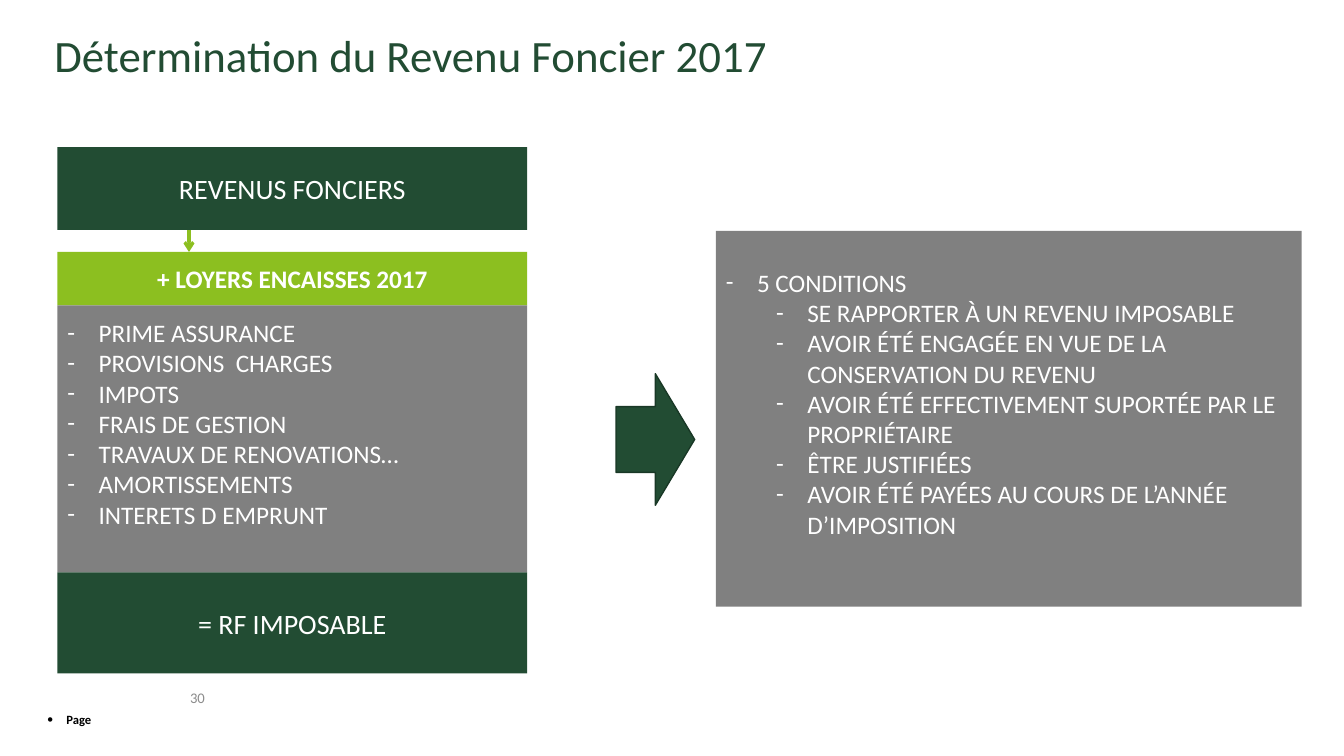
from dataclasses import dataclass

from lxml import etree
from pptx import Presentation
from pptx.dml.color import RGBColor
from pptx.enum.shapes import MSO_CONNECTOR as Line, MSO_SHAPE as Shape
from pptx.enum.text import MSO_ANCHOR as Anchor, PP_ALIGN as Align
from pptx.oxml.ns import qn
from pptx.util import Inches, Pt


@dataclass(frozen=True)
class Theme:
    font: str = "Calibri"
    green: str = "224C33"
    edge: str = "193826"
    lime: str = "8CBF20"
    grey: str = "808080"
    pale: str = "8C8C8C"
    white: str = "FFFFFF"
    black: str = "000000"
    title: float = 32
    band: float = 20
    body: float = 18
    number: float = 10.5
    footer: float = 9


THEME = Theme()
WIDTH, HEIGHT = 13.33, 7.5
LINE_HEIGHT = 0.31
HANG = 0.31

CHARGES = ["PRIME ASSURANCE", "PROVISIONS  CHARGES", "IMPOTS", "FRAIS DE GESTION",
           "TRAVAUX DE RENOVATIONS…", "AMORTISSEMENTS", "INTERETS D EMPRUNT"]
CONDITIONS = ["SE RAPPORTER À UN REVENU IMPOSABLE",
              "AVOIR ÉTÉ ENGAGÉE EN VUE DE LA CONSERVATION DU REVENU",
              "AVOIR ÉTÉ EFFECTIVEMENT SUPORTÉE PAR LE PROPRIÉTAIRE",
              "ÊTRE JUSTIFIÉES",
              "AVOIR ÉTÉ PAYÉES AU COURS DE L’ANNÉE D’IMPOSITION"]


def rgb(color):
    return RGBColor.from_string(color)


def style(p, size, color, bold=False, align=Align.LEFT):
    p.alignment = align
    for r in p.runs:
        r.font.name, r.font.size, r.font.bold = THEME.font, Pt(size), bold
        r.font.color.rgb = rgb(color)


def bullet(p, char, left, hang):
    pPr = p._p.get_or_add_pPr()
    pPr.set("marL", str(Inches(left)))
    pPr.set("indent", str(-Inches(hang)))
    etree.SubElement(pPr, qn("a:buFont")).set("typeface", "Calibri")
    etree.SubElement(pPr, qn("a:buChar")).set("char", char)


def add_label(s, box, text, size, color, **look):
    tf = s.shapes.add_textbox(*map(Inches, box)).text_frame
    tf.word_wrap = True
    tf.vertical_anchor = Anchor.MIDDLE
    tf.text = text
    style(tf.paragraphs[0], size, color, **look)
    return tf


def add_block(s, box, fill, kind=Shape.RECTANGLE):
    sp = s.shapes.add_shape(kind, *map(Inches, box))
    sp.shadow.inherit = False
    sp.fill.solid()
    sp.fill.fore_color.rgb = rgb(fill)
    sp.line.fill.background()
    return sp


def add_band(s, box, text, fill, size, bold=False):
    tf = add_block(s, box, fill).text_frame
    tf.vertical_anchor = Anchor.MIDDLE
    tf.text = text
    style(tf.paragraphs[0], size, THEME.white, bold, Align.CENTER)


def add_list(s, box, items):
    """Grey panel of (level, text) items, centred above one free line."""
    tf = add_block(s, box, THEME.grey).text_frame
    tf.word_wrap = True
    tf.vertical_anchor = Anchor.MIDDLE
    tf.margin_bottom = Inches(0.05 + LINE_HEIGHT)
    tf.text = "\n".join(text for _, text in items)
    for p, (level, _) in zip(tf.paragraphs, items):
        p.level = level
        bullet(p, "-", HANG + level * 0.5, HANG)
        style(p, THEME.body, THEME.white)


def add_down_arrow(s, start, end):
    cx = s.shapes.add_connector(Line.STRAIGHT, *map(Inches, start + end))
    cx.line.color.rgb = rgb(THEME.lime)
    cx.line.width = Pt(2.25)
    etree.SubElement(cx.line._get_or_add_ln(), qn("a:tailEnd")).set("type", "arrow")
    etree.SubElement(cx._element.spPr, qn("a:effectLst"))


def income_column(s, x, y, w):
    """Stacks the income calculation downwards from y."""
    head, gap, rents, charges, result = 0.82, 0.22, 0.53, 2.65, 1.0
    add_band(s, (x, y, w, head), "REVENUS FONCIERS", THEME.green, THEME.band)
    y += head
    arrow_x = x + 0.28 * w
    add_down_arrow(s, (arrow_x, y), (arrow_x, y + gap))
    y += gap
    add_band(s, (x, y, w, rents), "+ LOYERS ENCAISSES 2017", THEME.lime, THEME.body, True)
    y += rents
    add_list(s, (x, y, w, charges), [(0, text) for text in CHARGES])
    y += charges
    add_band(s, (x, y, w, result), "= RF IMPOSABLE", THEME.green, THEME.band)


def conditions_panel(s, x, y, w, h):
    arrow = add_block(s, (x, y + 0.38 * h, 0.78, 0.35 * h), THEME.green, Shape.RIGHT_ARROW)
    arrow.line.color.rgb = rgb(THEME.edge)
    arrow.line.width = Pt(1)
    indent = 0.99
    items = [(0, "5 CONDITIONS")] + [(1, text) for text in CONDITIONS]
    add_list(s, (x + indent, y, w - indent, h), items)


def footer(s, x, y):
    add_label(s, (x + 1.17, y, 0.59, 0.25), "30", THEME.number, THEME.pale, align=Align.RIGHT)
    tf = add_label(s, (x, y + 0.21, 0.63, 0.25), "Page", THEME.footer, THEME.black, bold=True)
    tf.margin_right = 0
    bullet(tf.paragraphs[0], "•", 0.19, 0.19)


def main():
    prs = Presentation()
    prs.slide_width, prs.slide_height = Inches(WIDTH), Inches(HEIGHT)
    s = prs.slides.add_slide(prs.slide_layouts[6])
    add_label(s, (0.44, 0.22, 8.45, 0.64), "Détermination du Revenu Foncier 2017",
              THEME.title, THEME.green)
    income_column(s, 0.57, 1.46, 4.66)
    conditions_panel(s, 6.11, 2.29, 6.8, 3.73)
    footer(s, 0.37, 6.8)
    prs.save("out.pptx")


if __name__ == "__main__":
    main()
